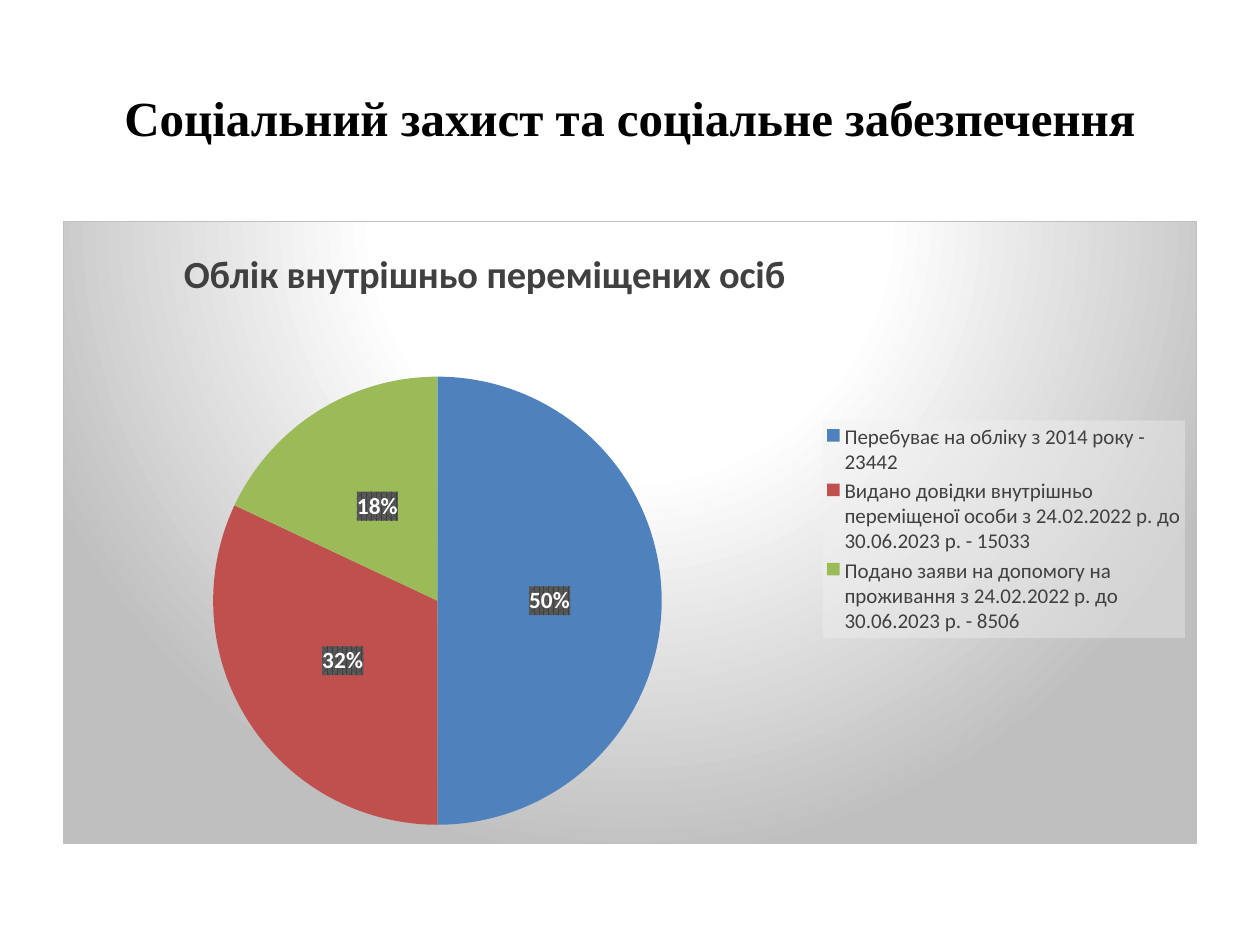
from dataclasses import dataclass
from typing import Optional

import pptx
import pptx.chart.data
import pptx.dml.color
import pptx.enum.chart
import pptx.enum.text
import pptx.oxml
import pptx.oxml.ns
import pptx.util
from pptx.dml.color import RGBColor
from pptx.util import Pt

BLACK = RGBColor(0x00, 0x00, 0x00)
WHITE = RGBColor(0xFF, 0xFF, 0xFF)
DARK_GREY = RGBColor(0x40, 0x40, 0x40)
BLUE = RGBColor(0x4F, 0x81, 0xBD)
RED = RGBColor(0xC0, 0x50, 0x4D)
GREEN = RGBColor(0x9B, 0xBB, 0x59)

HEADING = "Соціальний захист та соціальне забезпечення"
CHART_TITLE = "Облік внутрішньо переміщених осіб"

CHART_FILL = """
<a:gradFill><a:gsLst>
  <a:gs pos="0"><a:srgbClr val="FFFFFF"/></a:gs>
  <a:gs pos="39000"><a:srgbClr val="FFFFFF"/></a:gs>
  <a:gs pos="100000"><a:srgbClr val="BFBFBF"/></a:gs>
</a:gsLst><a:path path="circle">
  <a:fillToRect l="50000" t="-80000" r="50000" b="180000"/>
</a:path></a:gradFill>
<a:ln w="9525"><a:solidFill><a:srgbClr val="BFBFBF"/></a:solidFill></a:ln>"""
LEGEND_FILL = """
<a:solidFill><a:srgbClr val="F2F2F2"><a:alpha val="39000"/></a:srgbClr></a:solidFill>"""
LABEL_FILL = """
<a:pattFill prst="pct75"><a:fgClr><a:srgbClr val="404040"/></a:fgClr>
<a:bgClr><a:srgbClr val="595959"/></a:bgClr></a:pattFill>"""


@dataclass(frozen=True)
class Share:
    name: str
    percent: int
    color: RGBColor


@dataclass(frozen=True)
class Area:
    """Place inside the chart, as fractions of its width and height."""
    x: float
    y: float
    w: Optional[float] = None
    h: Optional[float] = None
    inner: bool = False


SHARES = [
    Share("Перебуває на обліку з 2014 року - 23442", 50, BLUE),
    Share("Видано довідки внутрішньо переміщеної особи з 24.02.2022 р. "
          "до 30.06.2023 р. - 15033", 32, RED),
    Share("Подано заяви на допомогу на проживання з 24.02.2022 р. "
          "до 30.06.2023 р. - 8506", 18, GREEN),
]


def style_font(font, size: float, color: RGBColor, bold: bool = False,
               name: str = "Calibri") -> None:
    font.name, font.size, font.bold = name, Pt(size), bold
    font.color.rgb = color


def set_area(element, area: Area, index: int) -> None:
    """Give a chart part a manual layout as its child number index."""
    for old in element.findall(pptx.oxml.ns.qn("c:layout")):
        element.remove(old)
    target = '<c:layoutTarget val="inner"/>' if area.inner else ""
    modes = '<c:xMode val="edge"/><c:yMode val="edge"/>'
    lengths = "".join(
        f'<c:{key} val="{value}"/>'
        for key, value in zip("xywh", (area.x, area.y, area.w, area.h))
        if value is not None)
    element.insert(index, pptx.oxml.parse_xml(
        f'<c:layout {pptx.oxml.ns.nsdecls("c")}><c:manualLayout>'
        f"{target}{modes}{lengths}</c:manualLayout></c:layout>"))


def set_fill(element, fill: str) -> None:
    """Put shape properties just before the text properties of a chart part."""
    element.find(pptx.oxml.ns.qn("c:txPr")).addprevious(pptx.oxml.parse_xml(
        f'<c:spPr {pptx.oxml.ns.nsdecls("c", "a")}>{fill}</c:spPr>'))


def add_heading(page) -> None:
    box = page.shapes.add_textbox(Pt(36), Pt(21.6), Pt(648), Pt(90))
    frame = box.text_frame
    frame.word_wrap = True
    frame.vertical_anchor = pptx.enum.text.MSO_ANCHOR.MIDDLE
    para = frame.paragraphs[0]
    para.text = HEADING
    para.alignment = pptx.enum.text.PP_ALIGN.CENTER
    style_font(para.font, 28, BLACK, True, "Times New Roman")


def add_pie(page) -> None:
    data = pptx.chart.data.CategoryChartData()
    data.categories = [share.name for share in SHARES]
    data.add_series(CHART_TITLE, [share.percent for share in SHARES])
    chart = page.shapes.add_chart(
        pptx.enum.chart.XL_CHART_TYPE.PIE,
        Pt(36), Pt(126), Pt(648), Pt(356.4), data).chart
    style_font(chart.font, 10, BLACK)

    chart.has_title = True
    title = chart.chart_title.text_frame
    title.text = CHART_TITLE
    style_font(title.paragraphs[0].font, 22, DARK_GREY, True)

    chart.has_legend = True
    chart.legend.position = pptx.enum.chart.XL_LEGEND_POSITION.RIGHT
    chart.legend.include_in_layout = False
    style_font(chart.legend.font, 12, DARK_GREY)

    plot = chart.plots[0]
    plot.vary_by_categories = True
    series = plot.series[0]
    for number, share in enumerate(SHARES):
        fill = series.points[number].format.fill
        fill.solid()
        fill.fore_color.rgb = share.color

    labels = series.data_labels
    labels.show_percentage = True
    labels.show_value = False
    labels.position = pptx.enum.chart.XL_LABEL_POSITION.CENTER
    style_font(labels.font, 13.3, WHITE, True)

    space = chart.element
    legend = space.xpath("c:chart/c:legend")[0]
    set_area(space.xpath("c:chart/c:title")[0], Area(0.1, 0.03), 1)
    set_area(legend, Area(0.67, 0.32, 0.32, 0.35), 1)
    set_area(space.xpath("c:chart/c:plotArea")[0],
             Area(0.13, 0.25, 0.4, 0.72, inner=True), 0)
    set_fill(space, CHART_FILL)
    set_fill(legend, LEGEND_FILL)
    set_fill(space.xpath(".//c:ser/c:dLbls")[0], LABEL_FILL)


def main() -> None:
    deck = pptx.Presentation()
    deck.slide_width, deck.slide_height = Pt(720), Pt(540)
    page = deck.slides.add_slide(deck.slide_layouts[6])
    add_heading(page)
    add_pie(page)
    deck.save("out.pptx")


if __name__ == "__main__":
    main()
